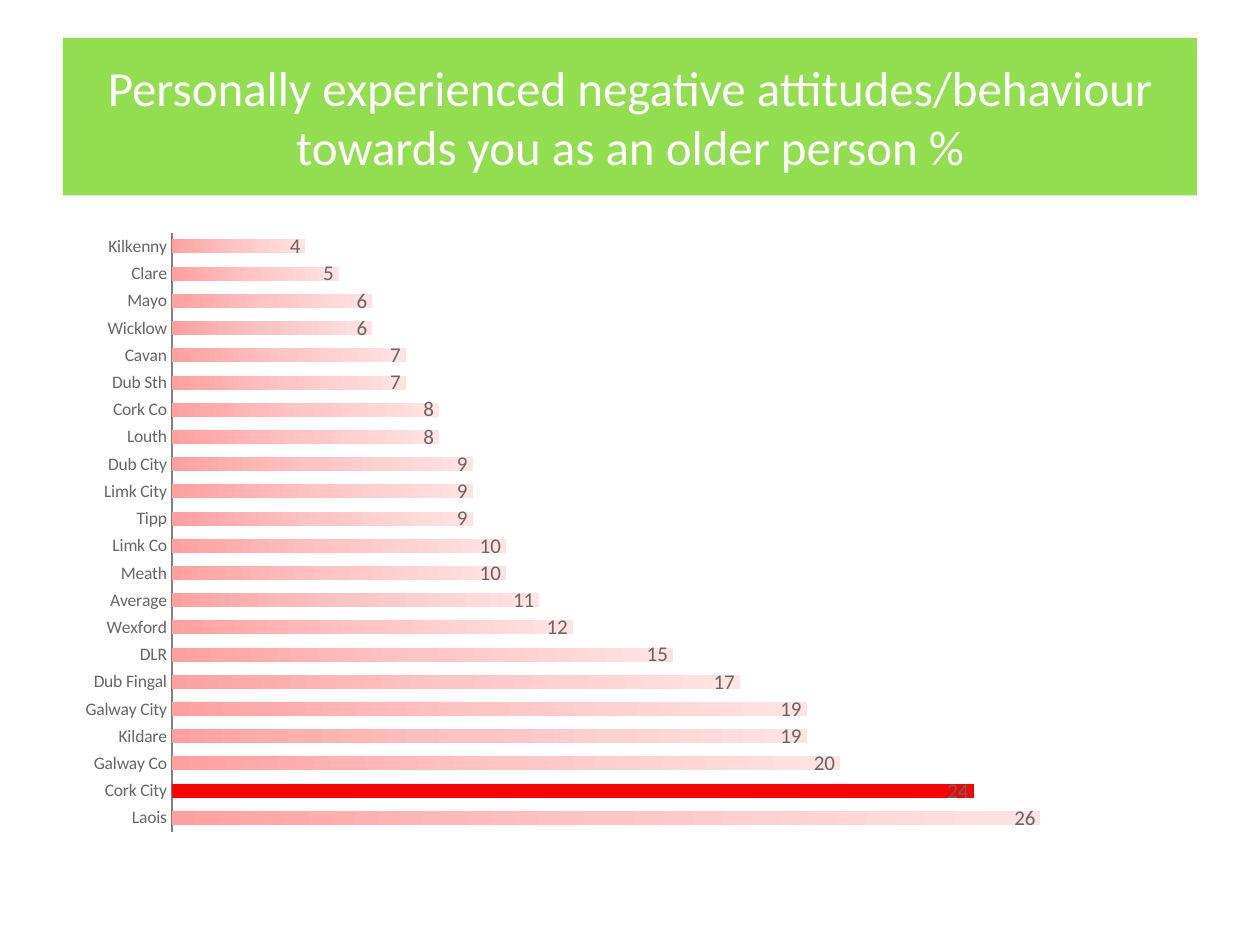
"""Build a slide charting negative attitudes experienced by older people, by area."""
import copy

import pptx
import pptx.chart.data
import pptx.dml.color
import pptx.enum.chart
import pptx.enum.dml
import pptx.enum.shapes
import pptx.enum.text
import pptx.oxml
import pptx.util

Pt = pptx.util.Pt
RGBColor = pptx.dml.color.RGBColor

HEADING = "Personally experienced negative attitudes/behaviour towards you as an older person %"
AREAS = [
    ("Laois", 26), ("Cork City", 24), ("Galway Co", 20), ("Kildare", 19),
    ("Galway City", 19), ("Dub Fingal", 17), ("DLR", 15), ("Wexford", 12),
    ("Average", 11), ("Meath", 10), ("Limk Co", 10), ("Tipp", 9),
    ("Limk City", 9), ("Dub City", 9), ("Louth", 8), ("Cork Co", 8),
    ("Dub Sth", 7), ("Cavan", 7), ("Wicklow", 6), ("Mayo", 6),
    ("Clare", 5), ("Kilkenny", 4),
]
HIGHLIGHTED = "Cork City"
FONT = "Calibri"
GREEN = RGBColor(0x92, 0xDE, 0x50)
WHITE = RGBColor(0xFF, 0xFF, 0xFF)
BLACK = RGBColor(0x00, 0x00, 0x00)
RED = RGBColor(0xFF, 0x00, 0x00)
GREY = RGBColor(0x66, 0x66, 0x66)
AXIS_GREY = RGBColor(0x80, 0x80, 0x80)
PINKS = [RGBColor(0xFF, 0xA0, 0xA0), RGBColor(0xFF, 0xC5, 0xC5), RGBColor(0xFF, 0xE3, 0xE3)]
MARGIN, CONTENT_WIDTH = Pt(36), Pt(648)
PLOT_FRACTIONS = {"x": 0.096, "y": 0.02, "w": 0.884, "h": 0.96}


def style_font(font, size, colour):
    font.name, font.size = FONT, Pt(size)
    font.color.rgb = colour


def add_heading(slide):
    banner = slide.shapes.add_shape(
        pptx.enum.shapes.MSO_SHAPE.RECTANGLE, MARGIN, Pt(21.6), CONTENT_WIDTH, Pt(90))
    banner.shadow.inherit = False
    banner.fill.solid()
    banner.fill.fore_color.rgb = GREEN
    banner.line.fill.background()
    frame = banner.text_frame
    frame.word_wrap = True
    frame.vertical_anchor = pptx.enum.text.MSO_ANCHOR.MIDDLE
    heading = frame.paragraphs[0]
    heading.text = HEADING
    heading.alignment = pptx.enum.text.PP_ALIGN.CENTER
    style_font(heading.runs[0].font, 28, WHITE)


def fill_with_pinks(bars):
    fill = bars.format.fill
    fill.gradient()
    fill.gradient_angle = 0
    first = bars._element.xpath(".//a:gs")[0]
    first.addnext(copy.deepcopy(first))
    for index, (stop, pink) in enumerate(zip(fill.gradient_stops, PINKS)):
        stop.position = index / (len(PINKS) - 1)
        stop.color.rgb = pink


def fix_plot_area(chart):
    plot_area = chart._chartSpace.chart.plotArea
    for automatic in plot_area.xpath("c:layout"):
        plot_area.remove(automatic)
    sides = "".join(f'<c:{side} val="{part}"/>' for side, part in PLOT_FRACTIONS.items())
    plot_area.insert(0, pptx.oxml.parse_xml(
        '<c:layout xmlns:c="http://schemas.openxmlformats.org/drawingml/2006/chart">'
        '<c:manualLayout><c:layoutTarget val="inner"/>'
        '<c:xMode val="edge"/><c:yMode val="edge"/>'
        f'{sides}</c:manualLayout></c:layout>'))


def add_area_chart(slide):
    names, percentages = zip(*AREAS)
    results = pptx.chart.data.CategoryChartData()
    results.categories = names
    results.add_series("Series 1", percentages)
    chart = slide.shapes.add_chart(
        pptx.enum.chart.XL_CHART_TYPE.BAR_STACKED,
        MARGIN, Pt(126), CONTENT_WIDTH, Pt(356.4), results).chart
    style_font(chart.font, 10, BLACK)
    chart.has_title = chart.has_legend = False
    fix_plot_area(chart)

    area_axis, percent_axis = chart.category_axis, chart.value_axis
    area_axis.major_tick_mark = pptx.enum.chart.XL_TICK_MARK.NONE
    area_axis.format.line.color.rgb = AXIS_GREY
    area_axis.format.line.width = Pt(1)
    style_font(area_axis.tick_labels.font, 10, GREY)
    percent_axis.minimum_scale, percent_axis.maximum_scale = 0, 30
    percent_axis.has_major_gridlines = False
    percent_axis.visible = False

    plot = chart.plots[0]
    plot.vary_by_categories = False
    plot.gap_width, plot.overlap = 95, 100
    bars = plot.series[0]
    fill_with_pinks(bars)
    highlight = bars.points[names.index(HIGHLIGHTED)].format.fill
    highlight.solid()
    highlight.fore_color.rgb = RED

    labels = bars.data_labels
    labels.show_value = True
    labels.position = pptx.enum.chart.XL_LABEL_POSITION.INSIDE_END
    labels.number_format = "#,##0"
    labels.number_format_is_linked = False
    style_font(labels.font, 12, GREY)


def main():
    deck = pptx.Presentation()
    deck.slide_width, deck.slide_height = Pt(720), Pt(540)
    slide = deck.slides.add_slide(deck.slide_layouts[6])
    add_heading(slide)
    add_area_chart(slide)
    deck.save("out.pptx")


if __name__ == "__main__":
    main()
